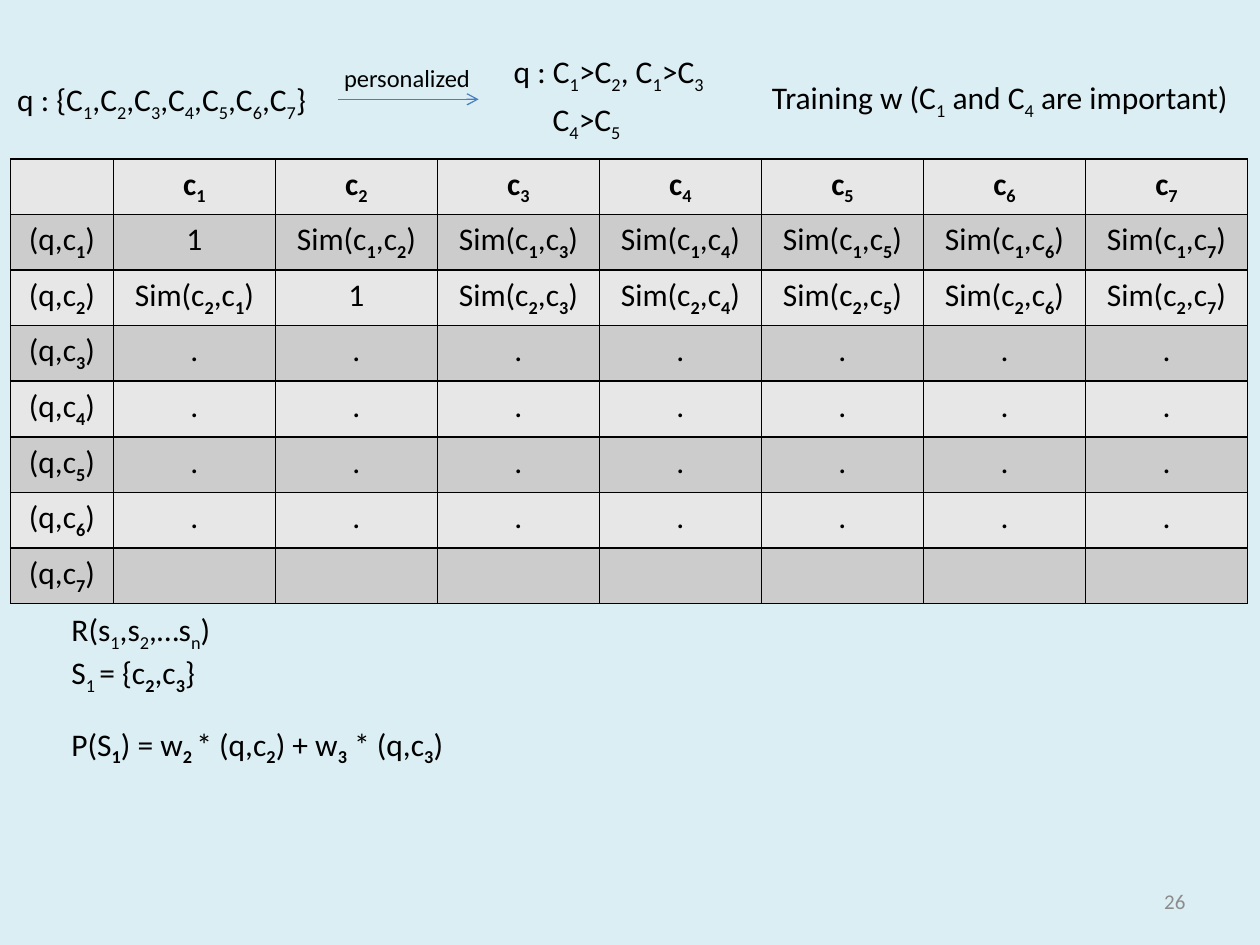
"""Build the slide on training personalized weights from concept similarities."""
from dataclasses import dataclass

from lxml.etree import SubElement
from pptx import Presentation
from pptx.dml.color import RGBColor
from pptx.enum.shapes import MSO_CONNECTOR
from pptx.enum.text import MSO_ANCHOR, MSO_AUTO_SIZE, PP_ALIGN
from pptx.oxml.ns import qn
from pptx.slide import Slide
from pptx.table import _Cell
from pptx.text.text import _Paragraph
from pptx.util import Pt

BLACK = "000000"
BANDS = ("E7E7E7", "CCCCCC")
CONCEPTS = range(1, 8)


@dataclass
class Label:
    """A text box; [x] marks a subscript and [*x] a bold subscript."""
    lines: tuple[str, ...]
    left: float
    top: float
    width: float
    height: float = 29
    size: float = 18
    color: str = BLACK
    align: PP_ALIGN = PP_ALIGN.LEFT
    anchor: MSO_ANCHOR = MSO_ANCHOR.TOP
    wrap: bool = False


LABELS = (
    Label(("26",), 516.5, 500.5, 168, size=12, color="8C8C8C",
          align=PP_ALIGN.RIGHT, anchor=MSO_ANCHOR.MIDDLE, wrap=True),
    Label(("q : C[1]>C[2], C[1]>C[3]",), 286.5, 26, 128),
    Label(("C[4]>C[5]",), 308.75, 53.5, 55.5),
    Label(("Training w (C[1] and C[4] are important)",), 434, 41, 286),
    Label(("q : {" + ",".join(f"C[{i}]" for i in CONCEPTS) + "}",), 2.75, 42, 190),
    Label(("personalized",), 189.5, 32.5, 87, 24.5, 14),
    Label(("R(s[1],s[2],…s[n])", "S[1 ]= {c[*2],c[*3]}"), 33.75, 345, 97, 51),
    Label(("P(S[*1]) = w[*2 ]* (q,c[*2]) + w[*3] * (q,c[*3])",), 33.75, 410.5, 240.5),
)


def hex_color(value: str) -> RGBColor:
    """Turn a hex string into a colour."""
    return RGBColor.from_string(value)


def add_run(paragraph: _Paragraph, text: str, size: float, color: str,
            bold: bool = False, subscript: bool = False) -> None:
    """Append one formatted run."""
    run = paragraph.add_run()
    run.text = text
    run.font.name = "Calibri"
    run.font.size = Pt(size)
    run.font.bold = bold
    run.font.color.rgb = hex_color(color)
    if subscript:
        run.font._element.set("baseline", "-25000")


def write_markup(paragraph: _Paragraph, markup: str, size: float = 18,
                 color: str = BLACK, bold: bool = False) -> None:
    """Write text whose bracketed parts are subscripts."""
    plain, *parts = markup.split("[")
    if plain:
        add_run(paragraph, plain, size, color, bold)
    for part in parts:
        subscript, rest = part.split("]")
        add_run(paragraph, subscript.lstrip("*"), size, color,
                bold or subscript.startswith("*"), True)
        if rest:
            add_run(paragraph, rest, size, color, bold)


def add_label(slide: Slide, label: Label) -> None:
    """Draw one text box."""
    shape = slide.shapes.add_textbox(Pt(label.left), Pt(label.top),
                                     Pt(label.width), Pt(label.height))
    frame = shape.text_frame
    frame.word_wrap = label.wrap
    frame.auto_size = MSO_AUTO_SIZE.NONE if label.wrap else MSO_AUTO_SIZE.SHAPE_TO_FIT_TEXT
    frame.vertical_anchor = label.anchor
    for index, line in enumerate(label.lines):
        paragraph = frame.add_paragraph() if index else frame.paragraphs[0]
        paragraph.alignment = label.align
        write_markup(paragraph, line, label.size, label.color)


def add_arrow(slide: Slide, left: float, right: float, top: float) -> None:
    """Draw the horizontal arrow under its caption."""
    connector = slide.shapes.add_connector(MSO_CONNECTOR.STRAIGHT, Pt(left), Pt(top),
                                           Pt(right), Pt(top))
    connector.line.color.rgb = hex_color("4B7EBC")
    connector.line.width = Pt(0.75)
    SubElement(connector.line._get_or_add_ln(), qn("a:tailEnd"), type="arrow")
    SubElement(connector._element.spPr, qn("a:effectLst"))


def style_cell(cell: _Cell, fill: str) -> None:
    """Give a cell black borders and a solid fill."""
    properties = cell._tc.get_or_add_tcPr()
    for side in ("lnL", "lnR", "lnT", "lnB"):
        border = SubElement(properties, qn(f"a:{side}"), w=str(Pt(1)))
        SubElement(SubElement(border, qn("a:solidFill")), qn("a:srgbClr"), val=BLACK)
    cell.fill.solid()
    cell.fill.fore_color.rgb = hex_color(fill)


def cell_markup(row: int, column: int) -> str:
    """Return the text of one cell of the similarity matrix."""
    if row == 0:
        return f"c[{column}]" if column else ""
    if column == 0:
        return f"(q,c[*{row}])"
    if row <= 2:
        return "1" if row == column else f"Sim(c[*{row}],c[*{column}])"
    return "." if row < 7 else ""


def add_similarity_table(slide: Slide) -> None:
    """Draw the matrix of concept similarities."""
    count = len(CONCEPTS) + 1
    frame = slide.shapes.add_table(count, count, Pt(6), Pt(90.75), Pt(707), Pt(230.4))
    table = frame.table
    table.first_row = table.horz_banding = False
    for index, column in enumerate(table.columns):
        column.width = Pt(92.6 if index else 58.8)
    for row_index, row in enumerate(table.rows):
        row.height = Pt(28.8)
        for column_index, cell in enumerate(row.cells):
            style_cell(cell, BANDS[row_index % 2])
            paragraph = cell.text_frame.paragraphs[0]
            paragraph.alignment = PP_ALIGN.CENTER
            write_markup(paragraph, cell_markup(row_index, column_index),
                         bold=row_index == 0)


def main() -> None:
    """Build and save the presentation."""
    presentation = Presentation()
    presentation.slide_width, presentation.slide_height = Pt(720), Pt(540)
    slide = presentation.slides.add_slide(presentation.slide_layouts[6])
    slide.background.fill.solid()
    slide.background.fill.fore_color.rgb = hex_color("DBEEF4")
    for label in LABELS:
        add_label(slide, label)
    add_arrow(slide, 193, 273.5, 56.75)
    add_similarity_table(slide)
    presentation.save("out.pptx")


if __name__ == "__main__":
    main()
